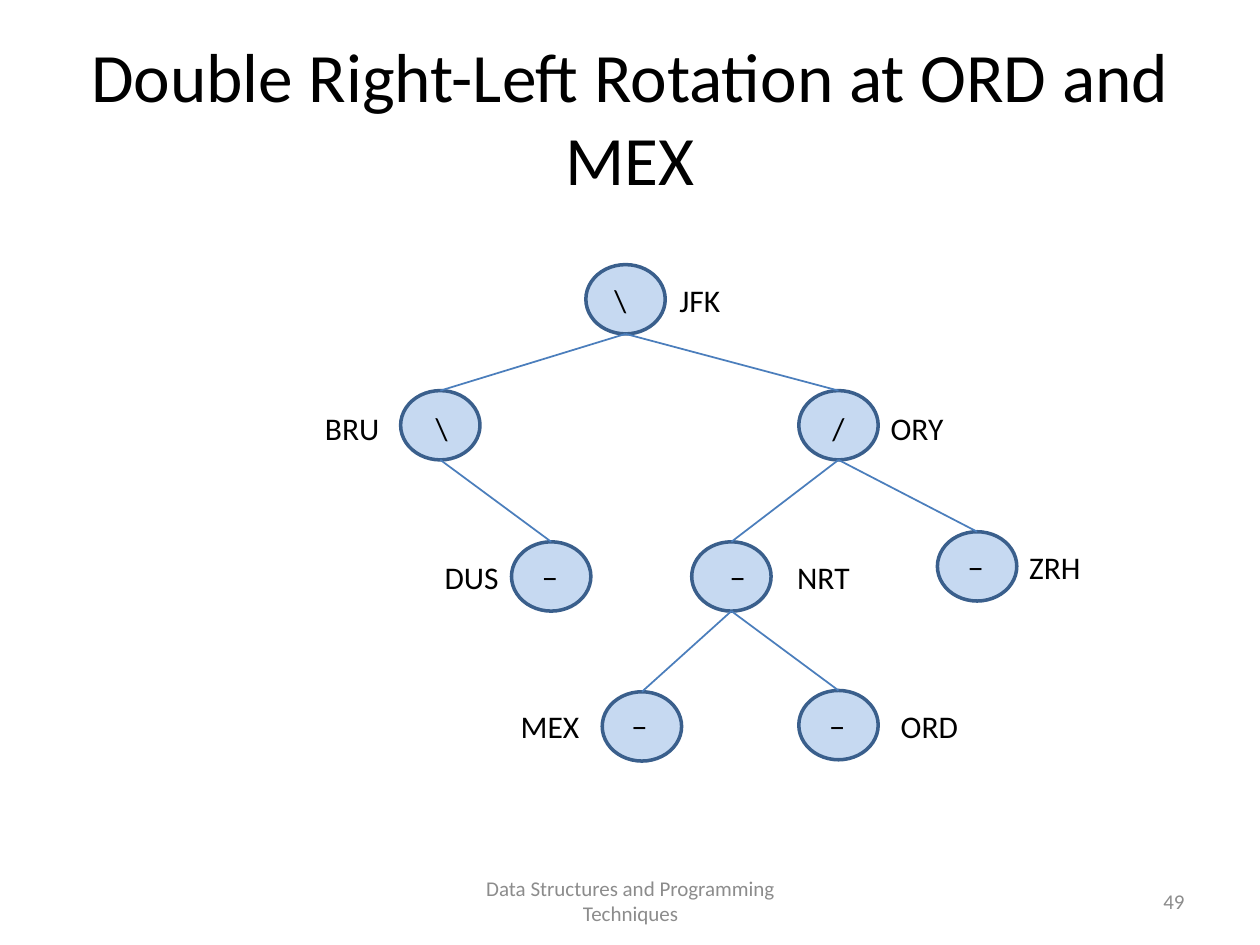
from pptx import Presentation
from pptx.dml.color import RGBColor
from pptx.enum.shapes import MSO_CONNECTOR as Link, MSO_SHAPE as Shape
from pptx.enum.text import MSO_ANCHOR as Anchor, PP_ALIGN as Align
from pptx.oxml.ns import qn
from pptx.util import Inches, Pt
from lxml.etree import SubElement

BLACK = RGBColor(0, 0, 0)
GRAY = RGBColor(0x8C, 0x8C, 0x8C)
PALE = RGBColor(0xC6, 0xD9, 0xF1)
RIM = RGBColor(0x3A, 0x5F, 0x8C)
EDGE = RGBColor(0x4B, 0x7E, 0xBC)

TITLE = "Double Right-Left Rotation at ORD and MEX"
FOOTER = "Data Structures and Programming Techniques"
NUMBER = "49"

# name: (node left, node top, text top, balance mark, mark left,
#        label left, label width, label alignment)
NODES = {
    "JFK": (4.65, 2.1, 2.18, "\\", 4.54, 5.24, 0.63, Align.CENTER),
    "BRU": (3.18, 3.1, 3.2, "\\", 3.12, 2.4, 0.79, Align.CENTER),
    "ORY": (6.34, 3.1, 3.2, "/", 6.27, 6.97, 0.63, Align.LEFT),
    "DUS": (4.06, 4.3, 4.38, "−", 3.98, 3.43, 0.63, Align.LEFT),
    "NRT": (5.49, 4.3, 4.38, "−", 5.47, 6.18, 0.71, Align.CENTER),
    "ZRH": (7.44, 4.22, 4.3, "−", 7.36, 8.07, 0.63, Align.LEFT),
    "MEX": (4.78, 5.49, 5.56, "−", 4.69, 3.98, 0.77, Align.CENTER),
    "ORD": (6.34, 5.48, 5.56, "−", 6.26, 7.05, 0.71, Align.LEFT),
}
EDGES = [("JFK", "BRU"), ("JFK", "ORY"), ("BRU", "DUS"), ("ORY", "NRT"),
         ("ORY", "ZRH"), ("NRT", "MEX"), ("NRT", "ORD")]
NODE_W, NODE_H = 0.63, 0.55
MARK_W, TEXT_H = 0.77, 0.4

deck = Presentation()
deck.slide_width, deck.slide_height = Inches(10), Inches(7.5)
slide = deck.slides.add_slide(deck.slide_layouts[6])
shapes = slide.shapes


def add_text(text, left, top, width, height=TEXT_H, size=18, color=BLACK,
             align=Align.CENTER, anchor=Anchor.TOP):
    box = shapes.add_textbox(*map(Inches, (left, top, width, height)))
    frame = box.text_frame
    frame.word_wrap = True
    frame.vertical_anchor = anchor
    para = frame.paragraphs[0]
    para.text = text
    para.alignment = align
    font = para.font
    font.name, font.size, font.color.rgb = "Calibri", Pt(size), color


def add_node(left, top):
    node = shapes.add_shape(
        Shape.OVAL, *map(Inches, (left, top, NODE_W, NODE_H)))
    node.shadow.inherit = False
    node.fill.solid()
    node.fill.fore_color.rgb = PALE
    node.line.color.rgb = RIM
    node.line.width = Pt(2)
    return node


def add_edge(parent, child):
    # From the bottom middle of the parent to the top middle of the child
    edge = shapes.add_connector(
        Link.STRAIGHT,
        parent.left + parent.width // 2, parent.top + parent.height,
        child.left + child.width // 2, child.top)
    edge.line.color.rgb = EDGE
    edge.line.width = Pt(1)
    SubElement(edge._element.spPr, qn("a:effectLst"))


# Title
add_text(TITLE, 0.5, 0.3, 9, 1.25, size=39.6, anchor=Anchor.MIDDLE)

# Tree: nodes, then edges, then marks and labels
ovals = {name: add_node(*spot[:2]) for name, spot in NODES.items()}
for parent, child in EDGES:
    add_edge(ovals[parent], ovals[child])
for name, (_, _, top, mark, mark_x, label_x, width, align) in NODES.items():
    add_text(mark, mark_x, top, MARK_W)
    add_text(name, label_x, top, width, align=align)

# Footer and slide number
small = dict(size=12, color=GRAY, anchor=Anchor.MIDDLE)
add_text(FOOTER, 3.42, 6.95, 3.17, **small)
add_text(NUMBER, 7.17, 6.95, 2.33, align=Align.RIGHT, **small)

deck.save("out.pptx")
